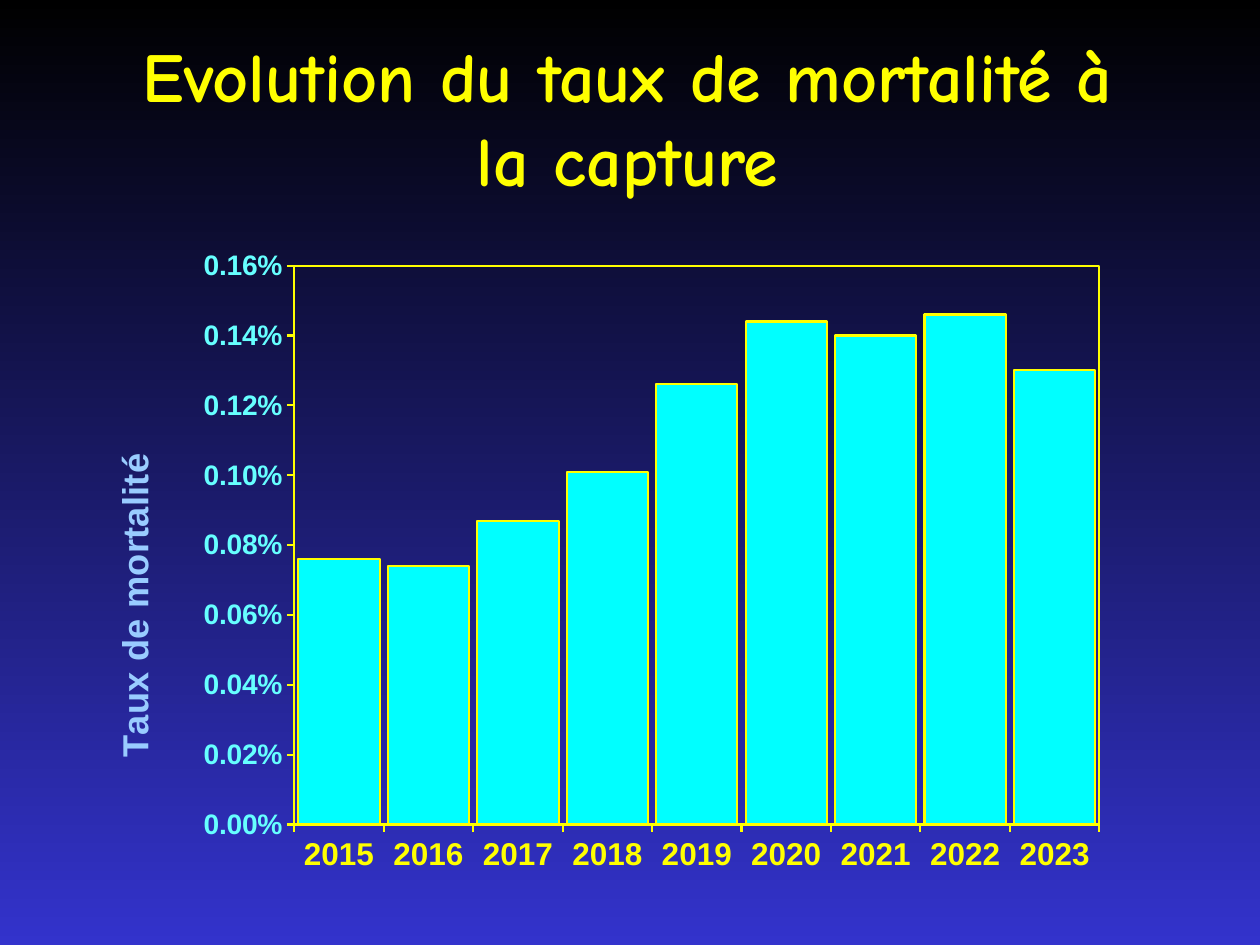
"""Build a slide with a column chart of the capture mortality rate by year."""
from lxml import etree
from pptx import Presentation
from pptx import util as u
from pptx.chart.data import CategoryChartData
from pptx.dml.color import RGBColor
from pptx.enum import chart as ch, text
from pptx.oxml import parse_xml
from pptx.oxml.ns import nsdecls, qn

TITLE = "Evolution du taux de mortalité à la capture"
AXIS_TITLE = "Taux de mortalité"
YEARS = [str(year) for year in range(2015, 2024)]
RATES_PERCENT = [0.076, 0.074, 0.087, 0.101, 0.126, 0.144, 0.14, 0.146, 0.13]
COLORS = {"top": "000000", "bottom": "3333CC", "yellow": "FFFF00",
          "bar": "00FFFF", "ticks": "66FFFF", "axis_title": "99CCFF"}
PLOT = {"x": 0.195, "y": 0.031, "w": 0.714, "h": 0.817}
AXIS_TITLE_POS = {"x": 0.027, "y": 0.296}


def rgb(name):
    return RGBColor.from_string(COLORS[name])


def style_font(font, name, size, color):
    font.name, font.size, font.bold = name, u.Pt(size), True
    font.color.rgb = rgb(color)


def style_line(line):
    line.color.rgb = rgb("yellow")
    line.width = u.Pt(1.15)


def manual_layout(pos, inner=False):
    target = '<c:layoutTarget val="inner"/>' if inner else ""
    modes = "".join(f'<c:{k}Mode val="edge"/>' for k in "xy")
    values = "".join(f'<c:{k} val="{v}"/>' for k, v in pos.items())
    return parse_xml(f'<c:layout {nsdecls("c")}><c:manualLayout>{target}{modes}{values}'
                     '</c:manualLayout></c:layout>')


def set_layout(parent, layout, index):
    for old in parent.findall(qn("c:layout")):
        parent.remove(old)
    parent.insert(index, layout)


def add_background(s):
    fill = s.background.fill
    fill.gradient()
    fill.gradient_angle = 270
    for stop, name, place in zip(fill.gradient_stops, ("top", "bottom"), (0, 1)):
        stop.color.rgb = rgb(name)
        stop.position = place


def add_title(s):
    tf = s.shapes.add_textbox(*map(u.Inches, (0.73, 0.21, 8.5, 1.25))).text_frame
    tf.word_wrap = True
    tf.vertical_anchor = text.MSO_ANCHOR.TOP
    p = tf.paragraphs[0]
    p.alignment = text.PP_ALIGN.CENTER
    r = p.add_run()
    r.text = TITLE
    style_font(r.font, "Comic Neue", 40, "yellow")
    effects = parse_xml(
        f'<a:effectLst {nsdecls("a")}><a:outerShdw dist="38100" dir="2700000">'
        '<a:srgbClr val="000000"/></a:outerShdw></a:effectLst>')
    r.font.fill._xPr.find(qn("a:solidFill")).addnext(effects)


def add_chart(s):
    data = CategoryChartData(number_format="0.00%")
    data.categories = YEARS
    data.add_series("Series 1", [round(v / 100, 5) for v in RATES_PERCENT])
    chart = s.shapes.add_chart(ch.XL_CHART_TYPE.COLUMN_CLUSTERED,
                               *map(u.Inches, (0.59, 1.94, 8.95, 5.43)), data).chart
    chart.has_legend = chart.has_title = False
    chart.font.name, chart.font.size = "Arial", u.Pt(11.5)
    plot = chart.plots[0]
    plot.gap_width, plot.vary_by_categories = 10, False
    bars = plot.series[0].format
    bars.fill.solid()
    bars.fill.fore_color.rgb = rgb("bar")
    style_line(bars.line)

    rate_axis = chart.value_axis
    for axis, size, color in ((chart.category_axis, 18, "yellow"), (rate_axis, 16.1, "ticks")):
        axis.has_major_gridlines = False
        axis.major_tick_mark = ch.XL_TICK_MARK.OUTSIDE
        style_font(axis.tick_labels.font, "Arial", size, color)
        style_line(axis.format.line)
    rate_axis.minimum_scale, rate_axis.maximum_scale, rate_axis.major_unit = 0, 0.0016, 0.0002
    rate_axis.tick_labels.number_format = "0.00%"
    rate_axis.tick_labels.number_format_is_linked = False

    title = rate_axis.axis_title
    tf = title.text_frame
    tf.text = AXIS_TITLE
    style_font(tf.paragraphs[0].runs[0].font, "Arial", 20.7, "axis_title")
    body = tf._txBody.find(qn("a:bodyPr"))
    body.set("rot", "-5400000")
    body.set("vert", "horz")
    set_layout(title._element, manual_layout(AXIS_TITLE_POS), 1)

    area = chart._chartSpace.chart.plotArea
    set_layout(area, manual_layout(PLOT, inner=True), 0)
    frame = etree.SubElement(area, qn("c:spPr"))
    frame.append(parse_xml(f'<a:noFill {nsdecls("a")}/>'))
    frame.append(parse_xml(f'<a:ln {nsdecls("a")} w="{u.Pt(1.15)}"><a:solidFill>'
                           f'<a:srgbClr val="{COLORS["yellow"]}"/></a:solidFill></a:ln>'))


def main():
    prs = Presentation()
    prs.slide_width, prs.slide_height = u.Inches(10), u.Inches(7.5)
    s = prs.slides.add_slide(prs.slide_layouts[6])
    add_background(s)
    add_title(s)
    add_chart(s)
    prs.save("out.pptx")


if __name__ == "__main__":
    main()
